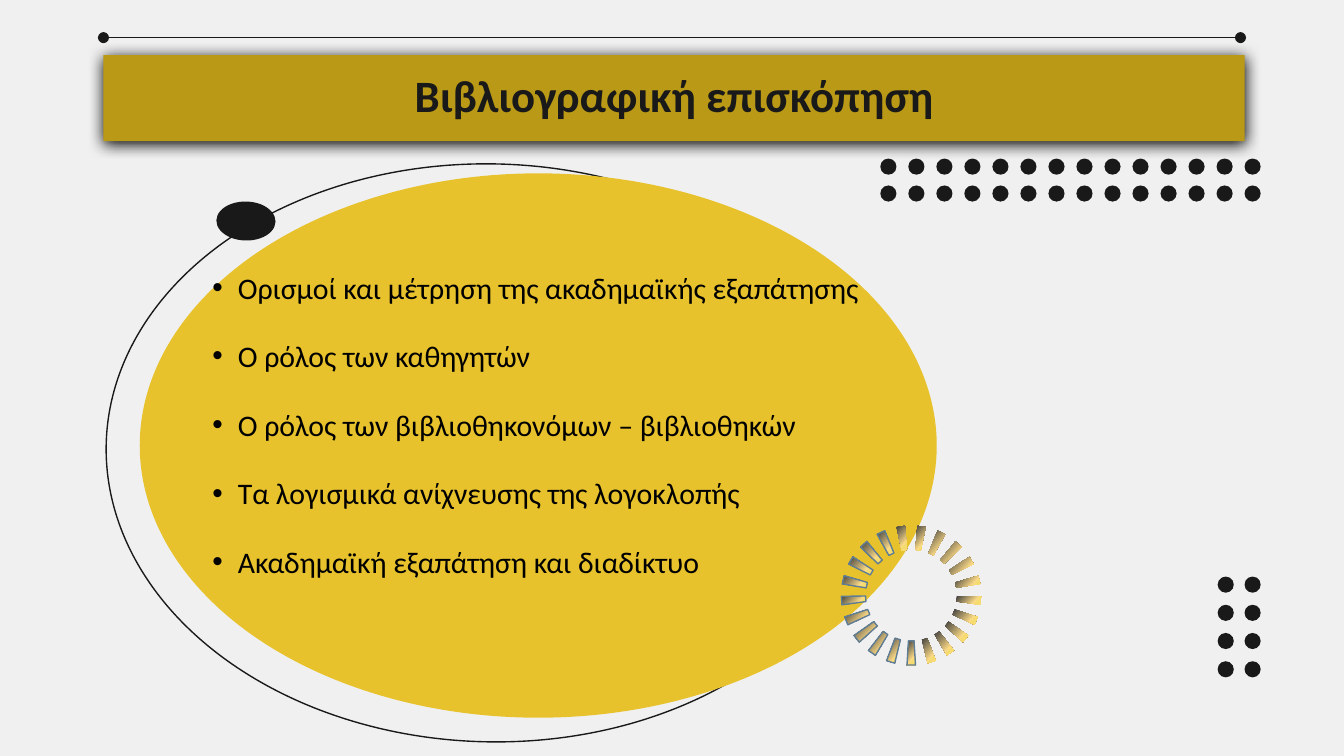
import copy
import math

from lxml import etree
from pptx import Presentation
from pptx import util as u
from pptx.dml.color import RGBColor
from pptx.enum import shapes, text
from pptx.oxml.ns import qn

INK, GOLD, DARK_GOLD, BLUE_GREY = "191919", "E7C22C", "B99915", "5F7D95"
GRADIENT = [(0, "404040"), (0.73, "FFDD88"), (0.78, "F5DB70")]
TITLE = "Βιβλιογραφική επισκόπηση"
TOPICS = [
    "Ορισμοί και μέτρηση της ακαδημαϊκής εξαπάτησης",
    "Ο ρόλος των καθηγητών",
    "Ο ρόλος των βιβλιοθηκονόμων – βιβλιοθηκών",
    "Τα λογισμικά ανίχνευσης της λογοκλοπής",
    "Ακαδημαϊκή εξαπάτηση και διαδίκτυο",
]


def rgb(value):
    return RGBColor.from_string(value)


def sub(parent, tag, **attrs):
    return etree.SubElement(parent, qn(tag), attrs)


def write(p, words, size=16, color="000000", bold=False, align=None,
          spacing=1.0, after=0, bullet=None, indent=0):
    p.alignment, p.line_spacing = align, spacing
    p.space_before, p.space_after = u.Pt(0), u.Pt(after)
    r = p.add_run()
    r.text = words
    f = r.font
    f.name, f.size, f.bold = "Calibri", u.Pt(size), bold
    f.color.rgb = rgb(color)
    if bullet:
        pPr = p._p.get_or_add_pPr()
        pPr.set("marL", str(u.Inches(indent)))
        pPr.set("indent", str(-u.Inches(indent)))
        sub(pPr, "a:buChar", char=bullet)


class Deck:
    line_width = u.Pt(0.75)
    dot_size = 0.12

    def __init__(self, prs):
        self.s = prs.slides.add_slide(prs.slide_layouts[0])
        fill = self.s.background.fill
        fill.solid()
        fill.fore_color.rgb = rgb("F0F0F0")

    def group(self):
        return self.s.shapes.add_group_shape().shapes

    def paint(self, sp, fill=None, line=None):
        sp.shadow.inherit = False
        if fill:
            sp.fill.solid()
            sp.fill.fore_color.rgb = rgb(fill)
        else:
            sp.fill.background()
        if line:
            sp.line.color.rgb = rgb(line)
            sp.line.width = self.line_width
        else:
            sp.line.fill.background()

    def ellipse(self, box, fill=None, line=None, rotation=0, within=None):
        target = within or self.s.shapes
        sp = target.add_shape(shapes.MSO_SHAPE.OVAL, *map(u.Inches, box))
        sp.rotation = rotation
        self.paint(sp, fill, line)

    def dots(self, left, top, right, bottom, cols, rows):
        """Spread dots evenly between the first and last left/top positions."""
        grp = self.group()
        for row in range(rows):
            for col in range(cols):
                x = left + (right - left) * col / (cols - 1)
                y = top + (bottom - top) * row / (rows - 1)
                self.ellipse((x, y, self.dot_size, self.dot_size), INK, within=grp)

    def rule(self, x1, y1, x2, y2):
        """Draw a line with a round dot at each end."""
        c = self.s.shapes.add_connector(
            shapes.MSO_CONNECTOR.STRAIGHT, *map(u.Inches, (x1, y1, x2, y2)))
        c.line.color.rgb = rgb(INK)
        c.line.width = self.line_width
        ln = c.line._get_or_add_ln()
        sub(ln, "a:headEnd", type="oval")
        sub(ln, "a:tailEnd", type="oval")
        sub(c._element.spPr, "a:effectLst")

    def placeholder(self, idx, box, anchor):
        """Place a placeholder in front of everything drawn so far."""
        sp = self.s.placeholders[idx]
        sp.left, sp.top, sp.width, sp.height = map(u.Inches, box)
        self.s.shapes._spTree.append(sp._element)
        tf = sp.text_frame
        tf.word_wrap, tf.vertical_anchor = True, anchor
        tf.auto_size = text.MSO_AUTO_SIZE.NONE
        return sp, tf

    def title(self, words, box):
        sp, tf = self.placeholder(0, box, text.MSO_ANCHOR.MIDDLE)
        sp.fill.solid()
        sp.fill.fore_color.rgb = rgb(DARK_GOLD)
        effects = sub(sp._element.spPr, "a:effectLst")
        shadow = sub(effects, "a:outerShdw", blurRad=str(u.Pt(8.5)),
                     dist=str(u.Pt(1)), dir="5400000", algn="t", rotWithShape="0")
        sub(shadow, "a:srgbClr", val="000000")
        write(tf.paragraphs[0], words, size=24, color=INK, bold=True,
              align=text.PP_ALIGN.CENTER, spacing=0.9)

    def bullets(self, items, box, top_inset):
        _, tf = self.placeholder(1, box, text.MSO_ANCHOR.TOP)
        tf.margin_left = tf.margin_right = tf.margin_bottom = u.Inches(0.1)
        tf.margin_top = u.Inches(top_inset)
        for i, item in enumerate(items):
            p = tf.add_paragraph() if i else tf.paragraphs[0]
            write(p, item, align=text.PP_ALIGN.JUSTIFY, spacing=1.5, after=8,
                  bullet="•", indent=0.19)

    def gradient(self, sp):
        sp.fill.gradient()
        sp.fill.gradient_angle = 360 - 42
        stops = sp._element.spPr.find(qn("a:gradFill")).find(qn("a:gsLst"))
        stops.append(copy.deepcopy(stops[0]))
        for stop, (position, color) in zip(sp.fill.gradient_stops, GRADIENT):
            stop.position = position
            stop.color.rgb = rgb(color)

    def ring(self, cx, cy, inner, outer, count, outlined, half_angle):
        """Draw wedges clockwise from the bottom; the first ones are outlined."""
        grp = self.group()
        for i in range(count):
            angle = 90 + 360 * i / count
            corners = []
            for radius, turn in ((inner, -1), (outer, -1), (outer, 1), (inner, 1)):
                a = math.radians(angle + turn * half_angle)
                corners.append((u.Inches(cx + radius * math.cos(a)),
                                u.Inches(cy + radius * math.sin(a))))
            fb = grp.build_freeform(*corners[0])
            fb.add_line_segments(corners[1:], close=True)
            sp = fb.convert_to_shape()
            self.paint(sp, line=BLUE_GREY if i < outlined else None)
            self.gradient(sp)


def main():
    prs = Presentation()
    prs.slide_width = u.Inches(10)
    prs.slide_height = prs.slide_width * 9 // 16
    deck = Deck(prs)
    orbit = deck.group()
    deck.ellipse((0.79, 1.22, 5.73, 4.3), line=INK, rotation=1.3, within=orbit)
    deck.ellipse((1.61, 1.5, 0.44, 0.29), fill=INK, rotation=1.3, within=orbit)
    deck.ellipse((1.04, 1.29, 5.93, 4.05), fill=GOLD)
    deck.bullets(TOPICS, (1.48, 1.53, 6.74, 3), top_inset=0.34)
    deck.dots(6.55, 1.18, 9.26, 1.38, cols=14, rows=2)
    deck.rule(0.77, 0.28, 9.23, 0.28)
    deck.dots(9.06, 4.29, 9.26, 4.92, cols=2, rows=4)
    deck.title(TITLE, (0.77, 0.41, 8.49, 0.64))
    deck.ring(6.78, 4.43, inner=0.34, outer=0.52, count=21, outlined=10,
              half_angle=3.5)
    prs.save("out.pptx")


if __name__ == "__main__":
    main()
